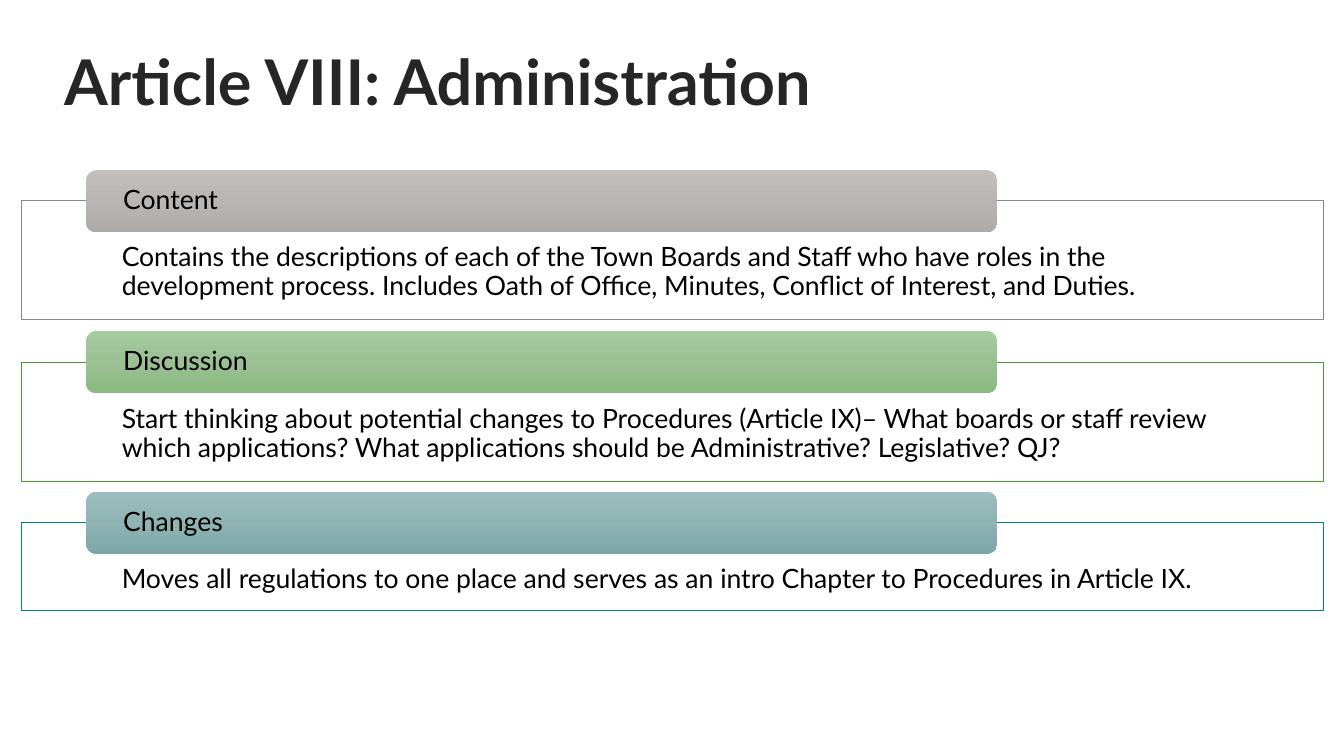
from copy import deepcopy

from pptx import Presentation
from pptx.dml.color import RGBColor
from pptx.enum import shapes, text
from pptx.oxml.ns import qn
from pptx.util import Cm, Pt

TITLE = "Article VIII: Administration"
# heading, body, frame top and height in cm, frame line, bar gradient
SECTIONS = [
    ("Content",
     "Contains the descriptions of each of the Town Boards and Staff who have roles in the "
     "development process. Includes Oath of Office, Minutes, Conflict of Interest, and Duties.",
     5.05, 3, "8B8580", ("C2BFBD", "B8B5B2", "AEAAA7")),
    ("Discussion",
     "Start thinking about potential changes to Procedures (Article IX)– What boards or staff "
     "review which applications? What applications should be Administrative? Legislative? QJ?",
     9.14, 3, "4B972F", ("A7CBA1", "9BC094", "89BA80")),
    ("Changes",
     "Moves all regulations to one place and serves as an intro Chapter to Procedures in "
     "Article IX.",
     13.16, 2.21, "008182", ("9DBDBE", "90B3B3", "7CA7A8")),
]
FRAME_LEFT, FRAME_WIDTH = 0.53, 32.82
BAR_LEFT, BAR_WIDTH, BAR_HEIGHT = 2.17, 22.96, 1.56
BAR_TOP, BAR_PITCH = 4.29, 4.05


def colour(code):
    return RGBColor.from_string(code)


def write(box, words, size, code, anchor, insets, bold=False):
    """Fill a box with one left-aligned paragraph; insets are left, top, right, bottom in cm."""
    frame = box.text_frame
    frame.word_wrap = True
    frame.vertical_anchor = anchor
    (frame.margin_left, frame.margin_top,
     frame.margin_right, frame.margin_bottom) = map(Cm, insets)
    para = frame.paragraphs[0]
    para.alignment = text.PP_ALIGN.LEFT
    para.line_spacing = 0.9
    span = para.add_run()
    span.text = words
    span.font.name = "Lato"
    span.font.size = Pt(size)
    span.font.bold = bold
    span.font.color.rgb = colour(code)


def add_block(page, kind, left, top, width, height):
    box = page.shapes.add_shape(kind, Cm(left), Cm(top), Cm(width), Cm(height))
    box.shadow.inherit = False
    return box


def shade_downward(box, codes):
    """Three-stop gradient from top to bottom."""
    box.fill.gradient()
    box.fill.gradient_angle = 270
    stop_list = box._element.spPr.find(".//" + qn("a:gsLst"))
    stop_list.insert(1, deepcopy(stop_list[0]))
    for stop, position, code in zip(box.fill.gradient_stops, (0, 0.5, 1), codes):
        stop.position = position
        stop.color.rgb = colour(code)


def main():
    deck = Presentation()
    deck.slide_width, deck.slide_height = Cm(33.87), Cm(19.05)
    page = deck.slides.add_slide(deck.slide_layouts[6])

    title = page.shapes.add_textbox(Cm(1.37), Cm(0.79), Cm(29.21), Cm(2.69))
    write(title, TITLE, 45, "262626", text.MSO_ANCHOR.MIDDLE,
          (0.25, 0.13, 0.25, 0.13), bold=True)

    for row, (heading, body, top, height, line, shades) in enumerate(SECTIONS):
        frame = add_block(page, shapes.MSO_SHAPE.RECTANGLE,
                          FRAME_LEFT, top, FRAME_WIDTH, height)
        frame.fill.solid()
        frame.fill.fore_color.rgb = colour("FFFFFF")
        frame.line.color.rgb = colour(line)
        frame.line.width = Pt(0.5)
        write(frame, body, 19, "000000", text.MSO_ANCHOR.TOP, (2.54, 1.09, 2.54, 0.38))

        bar = add_block(page, shapes.MSO_SHAPE.ROUNDED_RECTANGLE, BAR_LEFT,
                        BAR_TOP + row * BAR_PITCH, BAR_WIDTH, BAR_HEIGHT)
        shade_downward(bar, shades)
        bar.line.fill.background()
        write(bar, heading, 19, "000000", text.MSO_ANCHOR.MIDDLE, (0.86, 0, 0.86, 0))

    deck.save("out.pptx")


if __name__ == "__main__":
    main()
